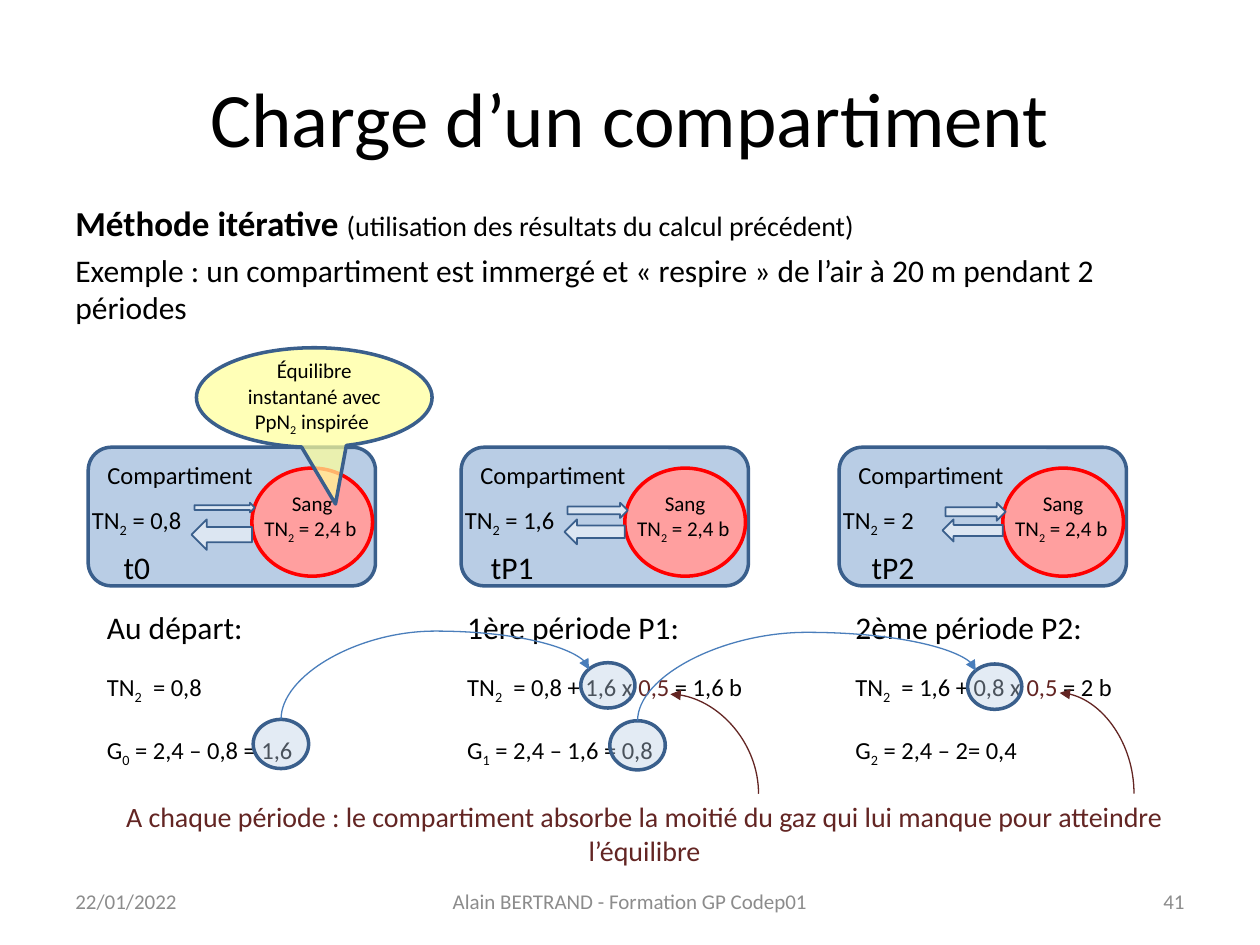
from collections import namedtuple

from pptx import Presentation
from pptx.dml.color import RGBColor
from pptx.enum.shapes import MSO_CONNECTOR, MSO_SHAPE
from pptx.enum.text import MSO_ANCHOR, PP_ALIGN
from pptx.oxml.ns import qn
from pptx.util import Inches, Pt

Box = namedtuple("Box", "left top width height")

FONT = "Calibri"
BLACK, BROWN, GREY, RED = "000000", "632523", "8C8C8C", "FF0000"
NAVY, BLUE, PALE, ICE = "3A5F8C", "4A7EBB", "B9CDE5", "DCE6F2"
PINK, YELLOW = "FF9F9F", "FFFF99"
SUB = {"sub": True}
LEFT, CENTER, RIGHT = PP_ALIGN.LEFT, PP_ALIGN.CENTER, PP_ALIGN.RIGHT
COLUMNS, ROWS = 10, 7.5


def color(code):
    """Turn a hex string into a colour."""
    return RGBColor.from_string(code)


def emu(box):
    """Convert grid cells of one inch into slide lengths."""
    return [Inches(value) for value in box]


def part(box, left, top, width, height):
    """Return the box found at the given shares of another box."""
    return Box(box.left + left * box.width, box.top + top * box.height,
               width * box.width, height * box.height)


def formula(name, index, *rest):
    """Return the spans of a symbol with a subscript and what follows it."""
    return [name, (index, SUB), *rest]


def write(frame, paras, size=14, ink=BLACK, align=LEFT, anchor=MSO_ANCHOR.TOP,
          sizes=(), gaps=()):
    """Fill a text frame with paragraphs made of plain or formatted spans."""
    frame.word_wrap = True
    frame.vertical_anchor = anchor
    for number, spans in enumerate(paras):
        para = frame.paragraphs[0] if number == 0 else frame.add_paragraph()
        para.alignment = align
        para.space_before = Pt(gaps[number] if gaps else 0)
        for item in spans:
            text, look = (item, {}) if isinstance(item, str) else item
            span = para.add_run()
            span.text = text
            font = span.font
            font.name = FONT
            font.size = Pt(look.get("size", sizes[number] if sizes else size))
            font.bold = look.get("bold", False)
            font.color.rgb = color(look.get("ink", ink))
            if look.get("sub"):
                font._element.set("baseline", "-25000")


def add_label(page, box, paras, **look):
    """Add a text box."""
    write(page.shapes.add_textbox(*emu(box)).text_frame, paras, **look)


def add_figure(page, kind, box, fill, line, weight, alpha=None):
    """Add a filled and outlined preset shape."""
    shape = page.shapes.add_shape(kind, *emu(box))
    shape.shadow.inherit = False
    shape.fill.solid()
    shape.fill.fore_color.rgb = color(fill)
    if alpha:
        tint = next(shape.element.iter(qn("a:srgbClr")))
        tint.makeelement(qn("a:alpha"))
        tint.append(tint.makeelement(qn("a:alpha"), {"val": str(alpha * 1000)}))
    shape.line.color.rgb = color(line)
    shape.line.width = Pt(weight)
    return shape


def add_curve(page, start, end, ink, turn, preset, bend=None):
    """Add a curved arrow whose frame is turned by a quarter around its middle."""
    middle = [(a + b) / 2 for a, b in zip(start, end)]
    across, down = abs(end[1] - start[1]) / 2, abs(end[0] - start[0]) / 2
    side = across if turn == 90 else -across
    curve = page.shapes.add_connector(
        MSO_CONNECTOR.CURVE,
        *emu((middle[0] + side, middle[1] + down, middle[0] - side, middle[1] - down)))
    curve.line.color.rgb = color(ink)
    curve.line.width = Pt(0.75)
    properties = curve.element.spPr
    properties.find(qn("a:xfrm")).set("rot", str(turn * 60000))
    geometry = properties.find(qn("a:prstGeom"))
    geometry.set("prst", preset)
    if bend:
        guides = geometry.find(qn("a:avLst"))
        guides.append(guides.makeelement(
            qn("a:gd"), {"name": "adj1", "fmla": f"val {round(bend * 100000)}"}))
    line = properties.find(qn("a:ln"))
    line.append(line.makeelement(qn("a:tailEnd"), {"type": "triangle"}))
    properties.append(properties.makeelement(qn("a:effectLst")))


def add_title(page, box):
    """Place and fill the title."""
    title = page.shapes.title
    title.left, title.top, title.width, title.height = emu(box)
    write(title.text_frame, [["Charge d’un compartiment"]], size=44,
          align=CENTER, anchor=MSO_ANCHOR.MIDDLE)


def add_introduction(page, box):
    """Add the name of the method and the example."""
    add_label(page, box, [
        [("Méthode itérative ", {"bold": True, "size": 20}),
         "(utilisation des résultats du calcul précédent)"],
        ["Exemple : un compartiment est immergé et «\u00a0respire\u00a0» "
         "de l’air à 20 m pendant 2 périodes"],
    ], sizes=(16, 18), gaps=(0, 4))


def add_compartment(page, box, tension, moment, inset, outflow, inflow):
    """Draw a compartment exchanging gas with the blood."""
    body = add_figure(page, MSO_SHAPE.ROUNDED_RECTANGLE, box, PALE, NAVY, 2)
    write(body.text_frame, [["Compartiment"]])
    blood = add_figure(page, MSO_SHAPE.OVAL, part(box, 0.57, 0.15, 0.42, 0.78), PINK, RED, 2)
    write(blood.text_frame, [["Sang"]], size=12, align=CENTER)
    add_label(page, part(box, 0.57, 0.45, 0.46, 0.27),
              [formula("TN", "2", " = 2,4 b")], size=12)
    add_figure(page, MSO_SHAPE.LEFT_ARROW, part(box, 0.36, 0.52, 0.21, inflow), ICE, NAVY, 1)
    add_figure(page, MSO_SHAPE.RIGHT_ARROW, part(box, 0.37, 0.4, 0.21, outflow), ICE, NAVY, 1)
    add_label(page, part(box, -0.03, 0.37, 0.44, 0.31), [formula("TN", "2", f" = {tension}")])
    add_label(page, part(box, inset, 0.68, 0.3, 0.36), [[moment]], size=18)


def add_calculation(page, box, heading, tension, index, gradient):
    """Add the calculation of one period."""
    add_label(page, box, [[heading], formula("TN", "2", *tension),
                          formula("G", index, gradient)],
              sizes=(18, 14, 14), gaps=(0, 14.6, 17.1))


def add_callout(page, box):
    """Add the remark pointing at the blood."""
    callout = add_figure(page, MSO_SHAPE.OVAL_CALLOUT, box, YELLOW, NAVY, 2, alpha=70)
    callout.adjustments[0], callout.adjustments[1] = 0.09, 1.07
    write(callout.text_frame,
          [formula("Équilibre instantané avec PpN", "2", " inspirée ")],
          size=12, align=CENTER, anchor=MSO_ANCHOR.MIDDLE)


def add_carry(page, source, target):
    """Circle a result and its reuse, and link them by an arrow."""
    for box in (source, target):
        add_figure(page, MSO_SHAPE.OVAL, box, PALE, NAVY, 2, alpha=40)
    start = part(source, 0.5, 0, 0, 0)
    end = part(target, 0.15, 0.15, 0, 0)
    add_curve(page, start[:2], end[:2], BLUE, 90, "curvedConnector3", bend=1.77)


def add_conclusion(page, box, arrows):
    """Add the rule and its arrows to the halving factors."""
    add_label(page, box, [["A chaque période : le compartiment absorbe la moitié du gaz "
                           "qui lui manque pour atteindre l’équilibre"]],
              size=16, ink=BROWN, align=CENTER)
    for start, end in arrows:
        add_curve(page, start, end, BROWN, 270, "curvedConnector2")


def add_footer(page, box):
    """Add the date, the author and the page number."""
    for left, width, text, align in (
            (0, 0.26, "22/01/2022", LEFT),
            (0.32, 0.36, "Alain BERTRAND - Formation GP Codep01", CENTER),
            (0.74, 0.26, "41", RIGHT)):
        add_label(page, part(box, left, 0, width, 1), [[text]], size=12, ink=GREY,
                  align=align, anchor=MSO_ANCHOR.MIDDLE)


def main():
    """Build the deck."""
    deck = Presentation()
    deck.slide_width, deck.slide_height = Inches(COLUMNS), Inches(ROWS)
    page = deck.slides.add_slide(deck.slide_layouts[5])
    add_title(page, Box(0.5, 0.3, 9, 1.25))
    add_introduction(page, Box(0.5, 1.55, 9, 1.45))
    for left, *state in ((0.7, "0,8", "t0", 0.08, 0.07, 0.22),
                         (3.66, "1,6", "tP1", 0.06, 0.11, 0.18),
                         (6.66, "2", "tP2", 0.07, 0.13, 0.16)):
        add_compartment(page, Box(left, 3.55, 2.28, 1.1), *state)
    half = ("0,5", {"ink": BROWN})
    for left, *steps in (
            (0.75, "Au départ:", ["  = 0,8"], "0", " = 2,4 – 0,8 = 1,6"),
            (3.61, "1ère période P1:", ["  = 0,8 + 1,6 x ", half, " = 1,6 b"],
             "1", " = 2,4 – 1,6 = 0,8"),
            (6.69, "2ème période P2:", ["  = 1,6 + 0,8 x ", half, " = 2 b"],
             "2", " = 2,4 – 2= 0,4")):
        add_calculation(page, Box(left, 4.78, 2.68, 1.31), *steps)
    add_callout(page, Box(1.56, 2.76, 1.87, 0.79))
    add_carry(page, Box(2.01, 5.71, 0.44, 0.39), Box(4.61, 5.26, 0.43, 0.36))
    add_carry(page, Box(4.84, 5.72, 0.44, 0.39), Box(7.68, 5.27, 0.43, 0.36))
    add_conclusion(page, Box(0.51, 6.3, 9.21, 0.64),
                   (((6.02, 6.3), (5.32, 5.51)), ((9, 6.3), (8.41, 5.5))))
    add_footer(page, Box(0.5, 6.95, 9, 0.4))
    deck.save("out.pptx")


if __name__ == "__main__":
    main()
